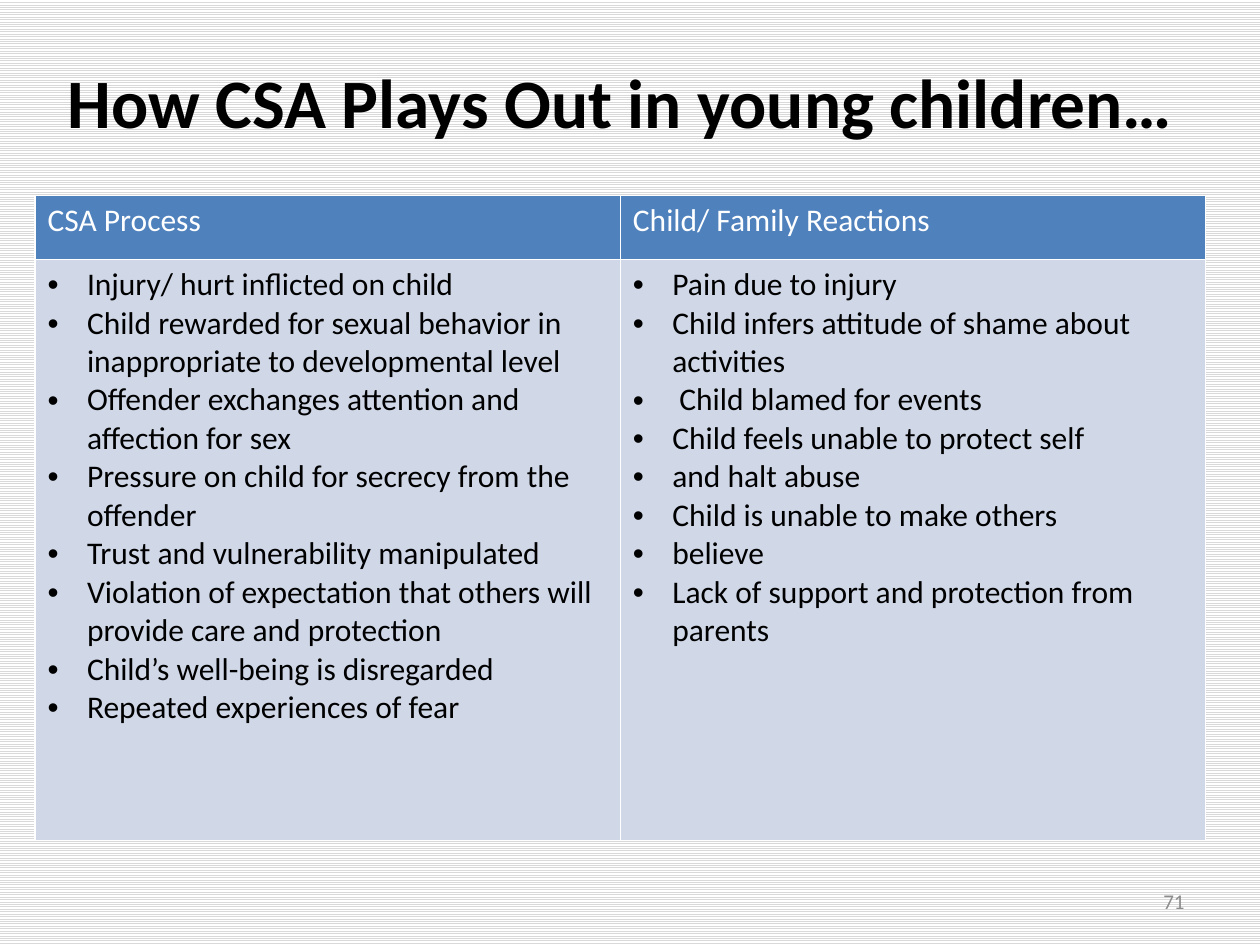
from pptx import Presentation
from pptx.dml.color import RGBColor
from pptx.enum.dml import MSO_PATTERN
from pptx.enum.text import MSO_ANCHOR, PP_ALIGN
from pptx.oxml.ns import qn
from pptx.util import Pt
from lxml.etree import SubElement


def color(code):
    return RGBColor.from_string(code)


def style(para, size, code, bold=False):
    for run in para.runs:
        font = run.font
        font.name = "Calibri"
        font.size = Pt(size)
        font.bold = bold
        font.color.rgb = color(code)


deck = Presentation()
deck.slide_width, deck.slide_height = Pt(720), Pt(540)
slide = deck.slides.add_slide(deck.slide_layouts[6])

# Striped background
back = slide.background.fill
back.patterned()
back.pattern = MSO_PATTERN.LIGHT_HORIZONTAL
back.fore_color.rgb = color("D9D9D9")
back.back_color.rgb = color("FFFFFF")

# Title and page number
labels = [
    ("How CSA Plays Out in young children…", (8.6, 9.4, 692, 96.5),
     PP_ALIGN.CENTER, 39.6, "000000", True),
    ("71", (516, 500.5, 168, 28.8), PP_ALIGN.RIGHT, 12, "8C8C8C", False),
]
for text, place, align, size, code, bold in labels:
    frame = slide.shapes.add_textbox(*map(Pt, place)).text_frame
    frame.word_wrap = True
    frame.vertical_anchor = MSO_ANCHOR.MIDDLE
    frame.text = text
    para = frame.paragraphs[0]
    para.alignment = align
    style(para, size, code, bold)

# Table content, column by column
columns = [
    ("CSA Process", [
        "Injury/ hurt inflicted on child",
        "Child rewarded for sexual behavior in inappropriate to developmental level",
        "Offender exchanges attention and affection for sex",
        "Pressure on child for secrecy from the offender",
        "Trust and vulnerability manipulated",
        "Violation of expectation that others will provide care and protection",
        "Child’s well-being is disregarded",
        "Repeated experiences of fear",
    ]),
    ("Child/ Family Reactions", [
        "Pain due to injury",
        "Child infers attitude of shame about activities",
        " Child blamed for events",
        "Child feels unable to protect self",
        "and halt abuse",
        "Child is unable to make others",
        "believe",
        "Lack of support and protection from parents",
    ]),
]
table = slide.shapes.add_table(
    2, 2, Pt(20), Pt(111.6), Pt(669), Pt(368.6)).table
table.rows[0].height, table.rows[1].height = Pt(36.6), Pt(332)

for col, (head, points) in enumerate(columns):
    table.columns[col].width = Pt(334.5)
    top, body = table.cell(0, col), table.cell(1, col)

    # Header
    top.text_frame.text = head
    style(top.text_frame.paragraphs[0], 18, "FFFFFF")

    # Bulleted points
    body.text_frame.text = "\n".join(points)
    for para in body.text_frame.paragraphs:
        style(para, 18, "000000")
        props = para._p.get_or_add_pPr()
        props.set("marL", str(Pt(22.5)))
        props.set("indent", str(Pt(-22.5)))
        SubElement(props, qn("a:buFont"), typeface="Arial")
        SubElement(props, qn("a:buChar"), char="•")

    # White borders and fills
    for cell, code in ((top, "4F81BD"), (body, "D0D8E8")):
        props = cell._tc.get_or_add_tcPr()
        for side in ("lnL", "lnR", "lnT", "lnB"):
            line = SubElement(props, qn(f"a:{side}"), w=str(Pt(1)))
            solid = SubElement(line, qn("a:solidFill"))
            SubElement(solid, qn("a:srgbClr"), val="FFFFFF")
        cell.fill.solid()
        cell.fill.fore_color.rgb = color(code)

deck.save("out.pptx")
